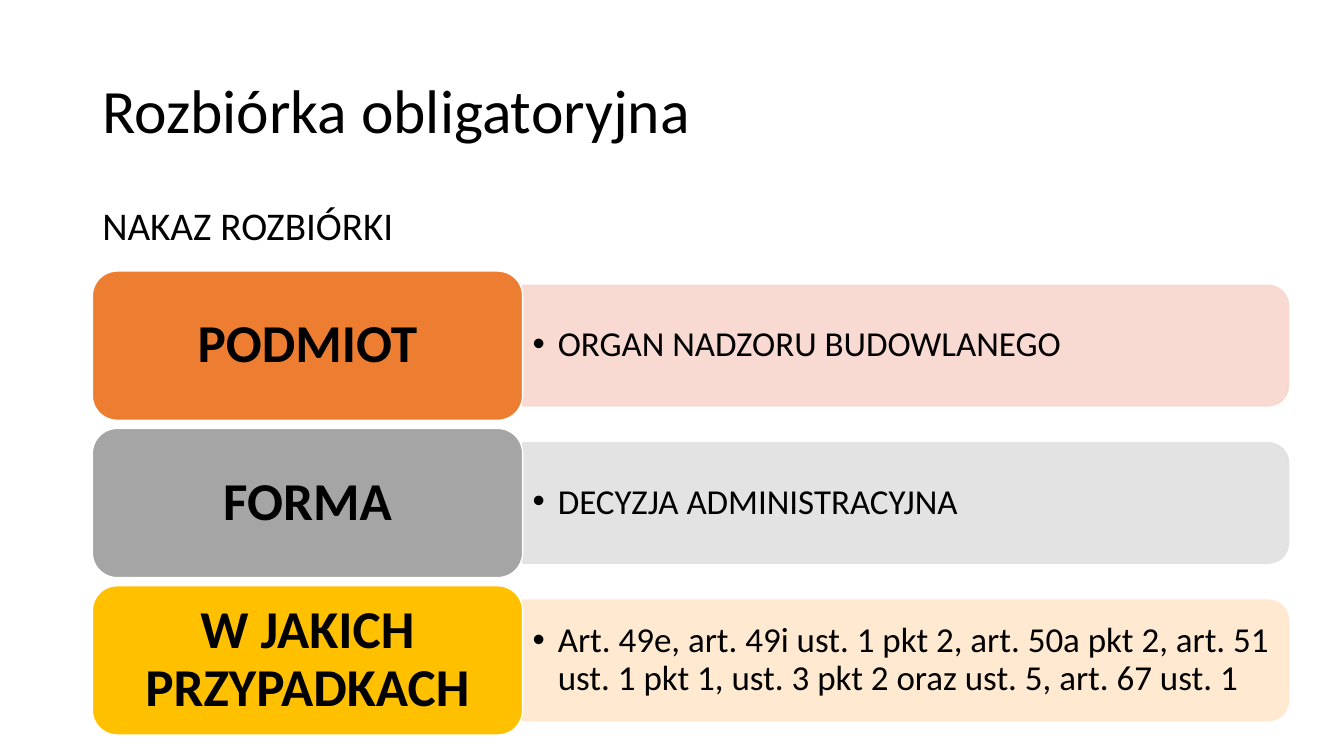
from dataclasses import dataclass

from lxml.etree import SubElement
from pptx import Presentation
from pptx.dml.color import RGBColor
from pptx.enum.shapes import MSO_SHAPE
from pptx.enum.text import MSO_ANCHOR, PP_ALIGN
from pptx.oxml.ns import qn
from pptx.shapes.autoshape import Shape
from pptx.slide import Slide
from pptx.util import Pt

COLORS = {
    "text": "000000", "white": "FFFFFF",
    "orange": "ED7D31", "pale_orange": "F8D7CE",
    "gray": "A5A5A5", "pale_gray": "E1E1E1",
    "gold": "FFC000", "pale_gold": "FFE8CC",
}
TITLE_FORMAT = {"name": "Calibri", "size": Pt(44), "bold": False}
HEADING_FORMAT = {"name": "Calibri", "size": Pt(28), "bold": False}
LABEL_FORMAT = {"name": "Calibri", "size": Pt(38), "bold": True}
DETAIL_FORMAT = {"name": "Calibri", "size": Pt(25), "bold": False}

LEFT = 66
CONTENT_WIDTH = 828
FIRST_ROW_TOP = 193.6
ROW_PITCH = 112.4
LABEL_WIDTH = 307.4
LABEL_HEIGHT = 106.6
BAND_LEFT = LEFT + LABEL_WIDTH
BAND_WIDTH = 547
BAND_HEIGHT = 86
BAND_OPACITY = 90
DETAIL_WIDTH = 543
BULLET_INDENT = 18


@dataclass(frozen=True)
class Row:
    label: str
    detail: str
    color: str
    band_color: str


ROWS = (
    Row("PODMIOT", "ORGAN NADZORU BUDOWLANEGO", "orange", "pale_orange"),
    Row("FORMA", "DECYZJA ADMINISTRACYJNA", "gray", "pale_gray"),
    Row("W JAKICH PRZYPADKACH",
        "Art. 49e, art. 49i ust. 1 pkt 2, art. 50a pkt 2, art. 51 "
        "ust. 1 pkt 1, ust. 3 pkt 2 oraz ust. 5, art. 67 ust. 1",
        "gold", "pale_gold"),
)


def write_text(shape: Shape, text: str, font_format: dict,
               anchor: MSO_ANCHOR = MSO_ANCHOR.MIDDLE,
               alignment: PP_ALIGN = PP_ALIGN.LEFT,
               margins: tuple[float, float] = (7.2, 3.6),
               bullet: bool = False) -> None:
    frame = shape.text_frame
    horizontal, vertical = map(Pt, margins)
    frame_format = {
        "word_wrap": True, "vertical_anchor": anchor,
        "margin_left": horizontal, "margin_right": horizontal,
        "margin_top": vertical, "margin_bottom": vertical,
    }
    for name, value in frame_format.items():
        setattr(frame, name, value)
    paragraph = frame.paragraphs[0]
    paragraph.alignment = alignment
    paragraph.line_spacing = 0.9
    if bullet:
        properties = paragraph._p.get_or_add_pPr()
        properties.set("marL", str(Pt(BULLET_INDENT)))
        properties.set("indent", str(-Pt(BULLET_INDENT)))
        SubElement(properties, qn("a:buFont"), typeface="Arial")
        SubElement(properties, qn("a:buChar"), char="•")
    run = paragraph.add_run()
    run.text = text
    for name, value in font_format.items():
        setattr(run.font, name, value)
    run.font.color.rgb = RGBColor.from_string(COLORS["text"])


def add_text_box(slide: Slide, left: float, top: float,
                 width: float, height: float) -> Shape:
    return slide.shapes.add_textbox(Pt(left), Pt(top), Pt(width), Pt(height))


def add_filled_shape(slide: Slide, preset: MSO_SHAPE, left: float, top: float,
                     width: float, height: float, fill: str, line: str) -> Shape:
    shape = slide.shapes.add_shape(preset, Pt(left), Pt(top), Pt(width), Pt(height))
    shape.shadow.inherit = False
    shape.fill.solid()
    shape.fill.fore_color.rgb = RGBColor.from_string(COLORS[fill])
    shape.line.color.rgb = RGBColor.from_string(COLORS[line])
    shape.line.width = Pt(1)
    return shape


def add_band(slide: Slide, center_y: float, color: str) -> None:
    center_x = BAND_LEFT + BAND_WIDTH / 2
    band = add_filled_shape(
        slide, MSO_SHAPE.ROUND_2_SAME_RECTANGLE,
        center_x - BAND_HEIGHT / 2, center_y - BAND_WIDTH / 2,
        BAND_HEIGHT, BAND_WIDTH, color, color)
    band.rotation = 90
    for color_element in band._element.spPr.iter(qn("a:srgbClr")):
        SubElement(color_element, qn("a:alpha"), val=str(BAND_OPACITY * 1000))


def add_row(slide: Slide, row: Row, top: float) -> None:
    center_y = top + LABEL_HEIGHT / 2
    add_band(slide, center_y, row.band_color)
    detail = add_text_box(slide, BAND_LEFT, center_y - BAND_HEIGHT / 2,
                          DETAIL_WIDTH, BAND_HEIGHT)
    write_text(detail, row.detail, DETAIL_FORMAT, bullet=True)
    label = add_filled_shape(slide, MSO_SHAPE.ROUNDED_RECTANGLE, LEFT, top,
                             LABEL_WIDTH, LABEL_HEIGHT, row.color, "white")
    write_text(label, row.label, LABEL_FORMAT, alignment=PP_ALIGN.CENTER,
               margins=(11.5, 5.8))


def main() -> None:
    """Build the slide on mandatory demolition and save it."""
    presentation = Presentation()
    presentation.slide_width = Pt(960)
    presentation.slide_height = Pt(540)
    slide = presentation.slides.add_slide(presentation.slide_layouts[6])
    title = add_text_box(slide, LEFT, 28.8, CONTENT_WIDTH, 104.4)
    write_text(title, "Rozbiórka obligatoryjna", TITLE_FORMAT)
    heading = add_text_box(slide, LEFT, 144, CONTENT_WIDTH, 42)
    write_text(heading, "NAKAZ ROZBIÓRKI", HEADING_FORMAT, anchor=MSO_ANCHOR.TOP)
    for index, row in enumerate(ROWS):
        add_row(slide, row, FIRST_ROW_TOP + index * ROW_PITCH)
    presentation.save("out.pptx")


if __name__ == "__main__":
    main()
